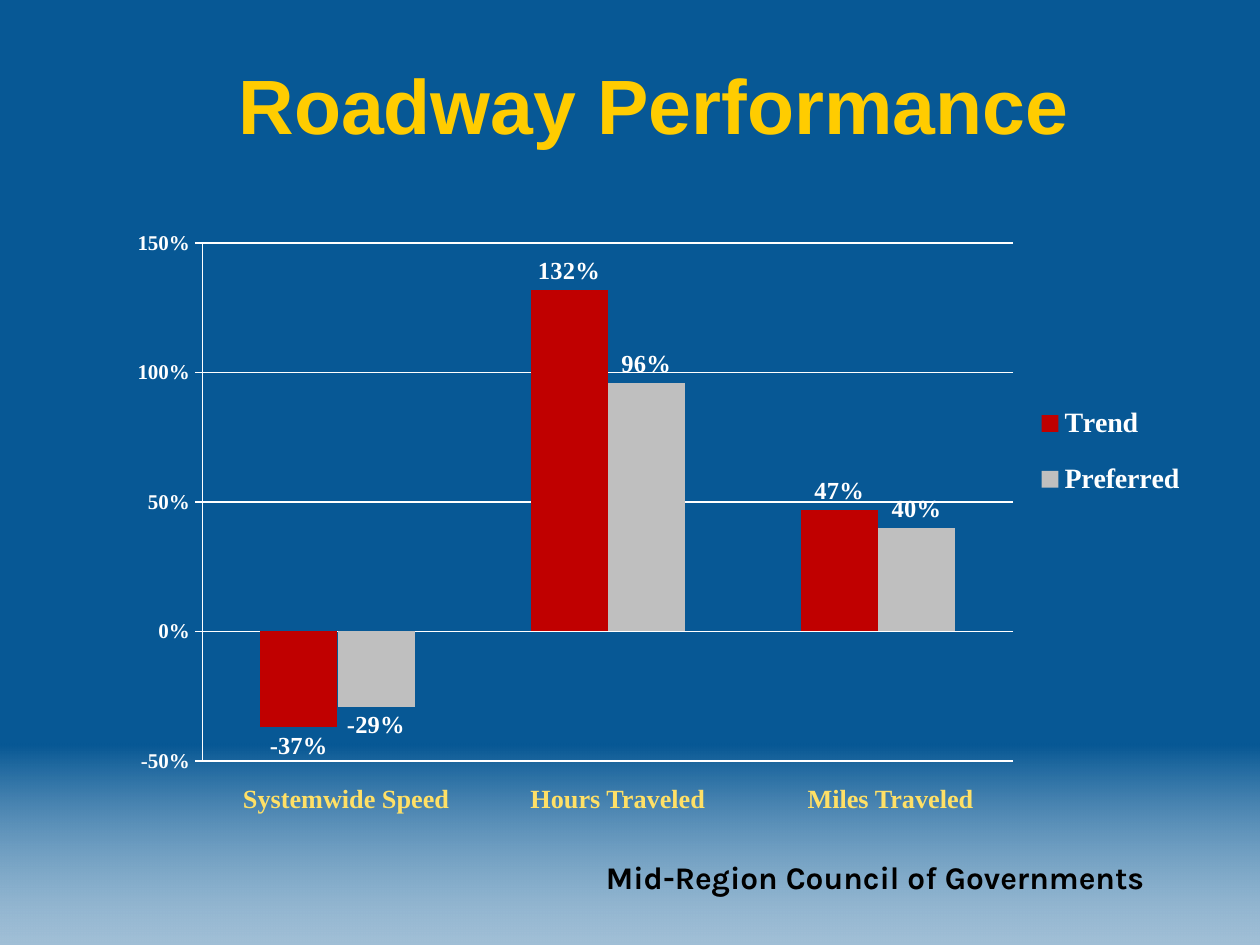
import pptx
import pptx.chart.data
import pptx.dml.color
import pptx.enum.chart
import pptx.enum.shapes
import pptx.enum.text
import pptx.oxml
import pptx.oxml.ns
import pptx.util
from pptx.util import Inches

# Content
TITLE = "Roadway Performance"
FOOTER = "Mid-Region Council of Governments"
CATEGORIES = ["1", "2", "3"]
SERIES = [
    ("Trend", (-0.37, 1.32, 0.47), "trend"),
    ("Preferred", (-0.29, 0.96, 0.40), "preferred"),
]
# Category captions: text, left, width, left inset
CAPTIONS = [
    ("Systemwide Speed", 1.83, 2.03, 0.1),
    ("Hours Traveled", 3.86, 2.31, 0.35),
    ("Miles Traveled", 6.16, 2.53, 0.25),
]

THEME = {
    "colors": {"background": "075895", "fade": "FFFFFF", "title": "FFCC00",
               "footer": "000000", "caption": "FFE066", "chart": "FFFFFF",
               "trend": "C00000", "preferred": "BFBFBF"},
    "fonts": {"title": ("Arial", 44), "footer": ("Karla", 18),
              "caption": ("Times New Roman", 15), "chart": ("Times New Roman", 10),
              "axis": ("Times New Roman", 12), "label": ("Times New Roman", 14),
              "legend": ("Times New Roman", 16)},
}
# Fractions of the chart: x, y, w, h
PLOT_LAYOUT = (0.08, 0.04, 0.75, 0.92)
LEGEND_LAYOUT = (0.85, 0.29, 0.14, 0.24)


def color(name):
    return pptx.dml.color.RGBColor.from_string(THEME["colors"][name])


def set_attributes(target, values):
    for name, value in values.items():
        setattr(target, name, value)


def format_font(font, style, color_name, bold=True):
    name, size = THEME["fonts"][style]
    set_attributes(font, {"name": name, "size": pptx.util.Pt(size), "bold": bold})
    font.color.rgb = color(color_name)


def fill_text(shape, text, style, **frame_values):
    set_attributes(shape.text_frame, frame_values)
    paragraph = shape.text_frame.paragraphs[0]
    paragraph.text = text
    format_font(paragraph.runs[0].font, style, style)
    return paragraph


def white_line(line):
    line.color.rgb = color("chart")
    line.width = pptx.util.Pt(1)


def manual_layout(element, fractions, inner=False):
    """Put a chart part at fixed fractions of the chart area."""
    for old in element.findall(pptx.oxml.ns.qn("c:layout")):
        element.remove(old)
    target = '<c:layoutTarget val="inner"/>' if inner else ""
    modes = '<c:xMode val="edge"/><c:yMode val="edge"/>'
    sizes = "".join(f'<c:{key} val="{value}"/>' for key, value in zip("xywh", fractions))
    layout = pptx.oxml.parse_xml(
        f'<c:layout {pptx.oxml.ns.nsdecls("c")}><c:manualLayout>'
        f"{target}{modes}{sizes}</c:manualLayout></c:layout>")
    element.insert(0 if inner else 1, layout)


def add_fade(slide):
    fade = slide.shapes.add_shape(pptx.enum.shapes.MSO_SHAPE.RECTANGLE,
                                  Inches(0), Inches(5.9), Inches(10), Inches(1.6))
    fade.shadow.inherit = False
    fade.line.fill.background()
    fade.fill.gradient()
    fade.fill.gradient_angle = 270
    stops = fade.fill.gradient_stops
    for stop, position, name in zip(stops, (0, 1), ("background", "fade")):
        stop.position = position
        stop.color.rgb = color(name)
    white = fade._element.spPr.findall(".//" + pptx.oxml.ns.qn("a:srgbClr"))[-1]
    white.append(pptx.oxml.parse_xml(
        f'<a:alpha {pptx.oxml.ns.nsdecls("a")} val="62000"/>'))


def add_performance_chart(slide):
    data = pptx.chart.data.CategoryChartData(number_format="0%")
    data.categories = CATEGORIES
    for name, values, _ in SERIES:
        data.add_series(name, values)
    chart = slide.shapes.add_chart(
        pptx.enum.chart.XL_CHART_TYPE.COLUMN_CLUSTERED,
        Inches(0.92), Inches(1.75), Inches(8.58), Inches(4.47), data).chart
    chart.has_title = False
    format_font(chart.font, "chart", "chart", bold=False)

    # Axes
    chart.category_axis.visible = False
    axis = chart.value_axis
    set_attributes(axis, {
        "minimum_scale": -0.5, "maximum_scale": 1.5, "major_unit": 0.5,
        "has_major_gridlines": True,
        "major_tick_mark": pptx.enum.chart.XL_TICK_MARK.OUTSIDE})
    set_attributes(axis.tick_labels, {"number_format": "0%",
                                      "number_format_is_linked": False})
    format_font(axis.tick_labels.font, "axis", "chart")
    white_line(axis.format.line)
    white_line(axis.major_gridlines.format.line)

    # Columns and their labels
    plot = chart.plots[0]
    set_attributes(plot, {"gap_width": 150, "overlap": 0, "vary_by_categories": False})
    for series, (_, _, color_name) in zip(plot.series, SERIES):
        series.invert_if_negative = False
        series.format.fill.solid()
        series.format.fill.fore_color.rgb = color(color_name)
        labels = series.data_labels
        set_attributes(labels, {
            "show_value": True, "number_format": "0%", "number_format_is_linked": False,
            "position": pptx.enum.chart.XL_LABEL_POSITION.OUTSIDE_END})
        format_font(labels.font, "label", "chart")

    # Legend and placement
    chart.has_legend = True
    set_attributes(chart.legend, {
        "position": pptx.enum.chart.XL_LEGEND_POSITION.RIGHT, "include_in_layout": False})
    format_font(chart.legend.font, "legend", "chart")
    manual_layout(chart._chartSpace.chart.plotArea, PLOT_LAYOUT, inner=True)
    manual_layout(chart.legend._element, LEGEND_LAYOUT)


def main():
    presentation = pptx.Presentation()
    set_attributes(presentation, {"slide_width": Inches(10), "slide_height": Inches(7.5)})
    slide = presentation.slides.add_slide(presentation.slide_layouts[5])
    slide.background.fill.solid()
    slide.background.fill.fore_color.rgb = color("background")
    add_fade(slide)

    # Footer
    footer = slide.shapes.add_textbox(Inches(4.71), Inches(6.76), Inches(4.72), Inches(0.4))
    fill_text(footer, FOOTER, "footer", word_wrap=False,
              auto_size=pptx.enum.text.MSO_AUTO_SIZE.SHAPE_TO_FIT_TEXT)

    # Title
    title = slide.shapes.title
    set_attributes(title, {"left": Inches(0.9), "top": Inches(0.2),
                           "width": Inches(8.58), "height": Inches(1.25)})
    paragraph = fill_text(title, TITLE, "title", word_wrap=True,
                          vertical_anchor=pptx.enum.text.MSO_ANCHOR.MIDDLE)
    paragraph.alignment = pptx.enum.text.PP_ALIGN.CENTER

    add_performance_chart(slide)

    # Captions under the columns
    for text, left, width, inset in CAPTIONS:
        caption = slide.shapes.add_textbox(Inches(left), Inches(6.16),
                                           Inches(width), Inches(0.42))
        fill_text(caption, text, "caption", word_wrap=True, margin_left=Inches(inset))

    presentation.save("out.pptx")


if __name__ == "__main__":
    main()
